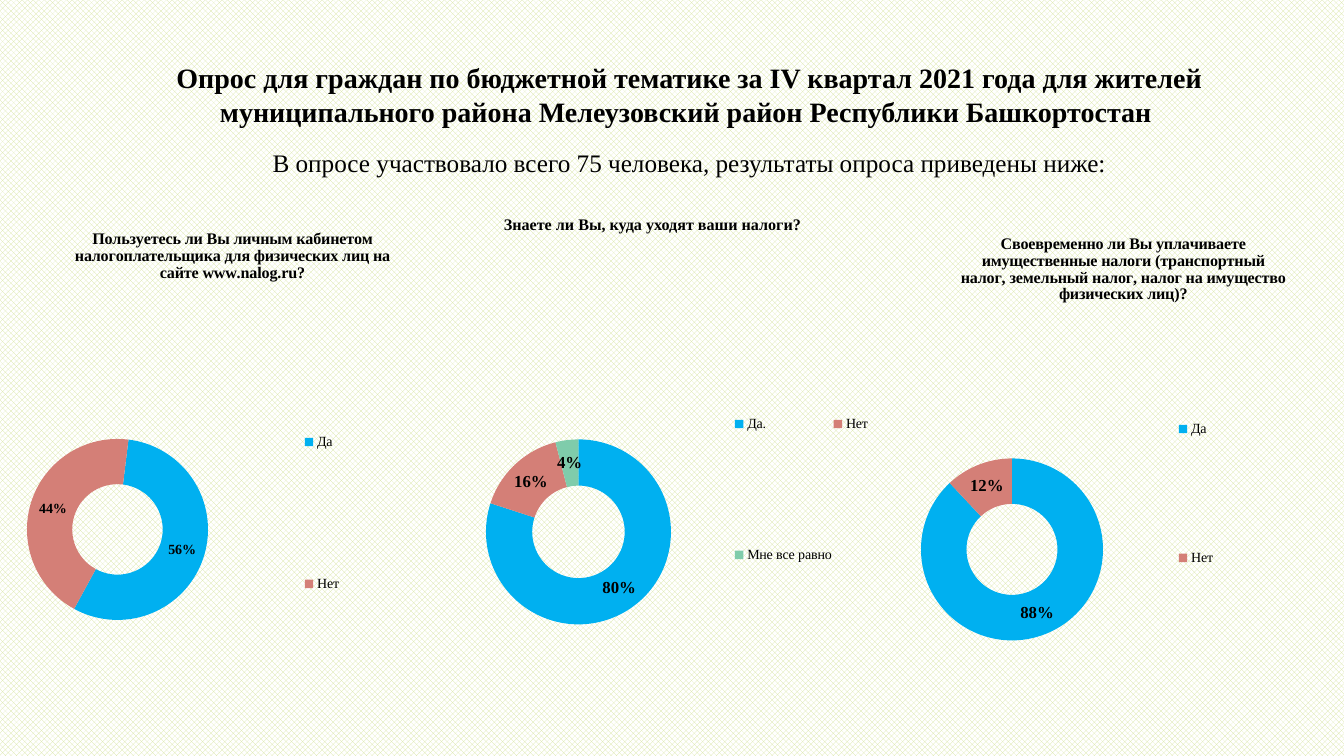
from lxml import etree
from pptx import Presentation
from pptx import util as u
from pptx.chart.data import CategoryChartData
from pptx.dml.color import RGBColor
from pptx.enum import chart as charts, dml, text

# Content: boxes are left, top, width, height in px
HEADINGS = [
    ("Опрос для граждан по бюджетной тематике за IV квартал 2021 года для жителей "
     "муниципального района Мелеузовский район Республики Башкортостан ",
     (83, 26, 1213, 107), "heading", True, text.MSO_ANCHOR.BOTTOM),
    ("В опросе участвовало всего 75 человека, результаты опроса приведены ниже:",
     (83, 142, 1213, 40), "summary", False, text.MSO_ANCHOR.TOP),
    ("Знаете ли Вы, куда уходят ваши налоги?",
     (464, 209, 377, 29), "question", True, text.MSO_ANCHOR.TOP),
]
POLLS = [
    dict(answers={"Да.": 80, "Нет": 16, "Мне все равно": 4},
         frame=(464, 210, 406, 525), ring=(486, 429, 185, 206),
         legend=(733, 301, 143, 377), label="label", angle=0),
    dict(question="Своевременно ли Вы уплачиваете имущественные налоги (транспортный "
                  "налог, земельный налог, налог на имущество физических лиц)?",
         title_at=(958, 231), answers={"Да": 88, "Нет": 12},
         frame=(897, 210, 417, 528), ring=(921, 442, 182, 215),
         legend=(1172, 308, 48, 371), label="label", angle=0),
    dict(question="Пользуетесь ли Вы личным кабинетом налогоплательщика для "
                  "физических лиц на сайте www.nalog.ru?",
         title_at=(72, 226), answers={"Да": 56, "Нет": 44},
         frame=(18, 207, 424, 534), ring=(27, 395, 181, 269),
         legend=(298, 308, 48, 410), label="small", angle=7),
]
THEME = dict(
    font="Times New Roman", ink="000000", paper="FFFFFF", pattern="D6E49C",
    slices=["00B0F0", "D47F77", "7FCCAB"],
    sizes=dict(heading=20, summary=18, question=11.5, label=12, small=10),
)
SLIDE_SIZE = (1344, 756)
EMU_PER_PX = 914400 / 100.8
CHART_NS = "http://schemas.openxmlformats.org/drawingml/2006/chart"


def px(*lengths):
    return [u.Emu(round(length * EMU_PER_PX)) for length in lengths]


def color(name):
    return RGBColor.from_string(THEME.get(name, name))


def style(font, size, bold=False):
    font.name = THEME["font"]
    font.size = u.Pt(THEME["sizes"][size])
    font.bold = bold
    font.color.rgb = color("ink")


def place(element, index, box, frame, inner=False):
    """Give a chart part a manual layout, as fractions of the chart frame."""
    for old in element.findall(f"{{{CHART_NS}}}layout"):
        element.remove(old)
    layout = etree.Element(f"{{{CHART_NS}}}layout")
    manual = etree.SubElement(layout, f"{{{CHART_NS}}}manualLayout")
    settings = [("layoutTarget", "inner")] if inner else []
    settings += [("xMode", "edge"), ("yMode", "edge")]
    left, top, width, height = frame
    fractions = [(box[0] - left) / width, (box[1] - top) / height]
    fractions += [side / whole for side, whole in zip(box[2:], (width, height))]
    settings += [(key, f"{value:.4f}") for key, value in zip("xywh", fractions)]
    for key, value in settings:
        etree.SubElement(manual, f"{{{CHART_NS}}}{key}").set("val", value)
    element.insert(index, layout)


def add_heading(slide, words, box, size, bold, anchor):
    frame = slide.shapes.add_textbox(*px(*box)).text_frame
    frame.word_wrap = True
    frame.vertical_anchor = anchor
    frame.text = words
    paragraph = frame.paragraphs[0]
    paragraph.alignment = text.PP_ALIGN.CENTER
    style(paragraph.runs[0].font, size, bold)


def add_poll(slide, poll):
    data = CategoryChartData()
    data.categories = list(poll["answers"])
    data.add_series("Series 1", list(poll["answers"].values()))
    frame = poll["frame"]
    chart = slide.shapes.add_chart(
        charts.XL_CHART_TYPE.DOUGHNUT, *px(*frame), data).chart
    style(chart.font, "small")

    # Question above the ring
    chart.has_title = "question" in poll
    if chart.has_title:
        title = chart.chart_title
        title.text_frame.text = poll["question"]
        paragraph = title.text_frame.paragraphs[0]
        paragraph.alignment = text.PP_ALIGN.CENTER
        style(paragraph.runs[0].font, "question", True)
        place(title._element, 1, poll["title_at"], frame)

    # Ring and percentages
    plot = chart.plots[0]
    plot.vary_by_categories = True
    for index in range(len(poll["answers"])):
        fill = plot.series[0].points[index].format.fill
        fill.solid()
        fill.fore_color.rgb = color(THEME["slices"][index])
    plot.has_data_labels = True
    labels = plot.data_labels
    labels.show_percentage = True
    labels.show_value = False
    labels.number_format = "0%"
    labels.number_format_is_linked = False
    style(labels.font, poll["label"], True)
    plot._element.find(f"{{{CHART_NS}}}firstSliceAng").set("val", str(poll["angle"]))
    place(plot._element.getparent(), 0, poll["ring"], frame, inner=True)

    # Legend: two-answer boxes are narrow enough to stack the entries
    chart.has_legend = True
    legend = chart.legend
    legend.position = charts.XL_LEGEND_POSITION.RIGHT
    legend.include_in_layout = False
    style(legend.font, "small")
    place(legend._element, 1, poll["legend"], frame)


def main():
    presentation = Presentation()
    presentation.slide_width, presentation.slide_height = px(*SLIDE_SIZE)
    slide = presentation.slides.add_slide(presentation.slide_layouts[6])

    # Patterned background
    fill = slide.background.fill
    fill.patterned()
    fill.pattern = dml.MSO_PATTERN.LARGE_CHECKER_BOARD
    fill.fore_color.rgb = color("pattern")
    fill.back_color.rgb = color("paper")

    for poll in POLLS:
        add_poll(slide, poll)
    for heading in HEADINGS:
        add_heading(slide, *heading)
    presentation.save("out.pptx")


if __name__ == "__main__":
    main()
